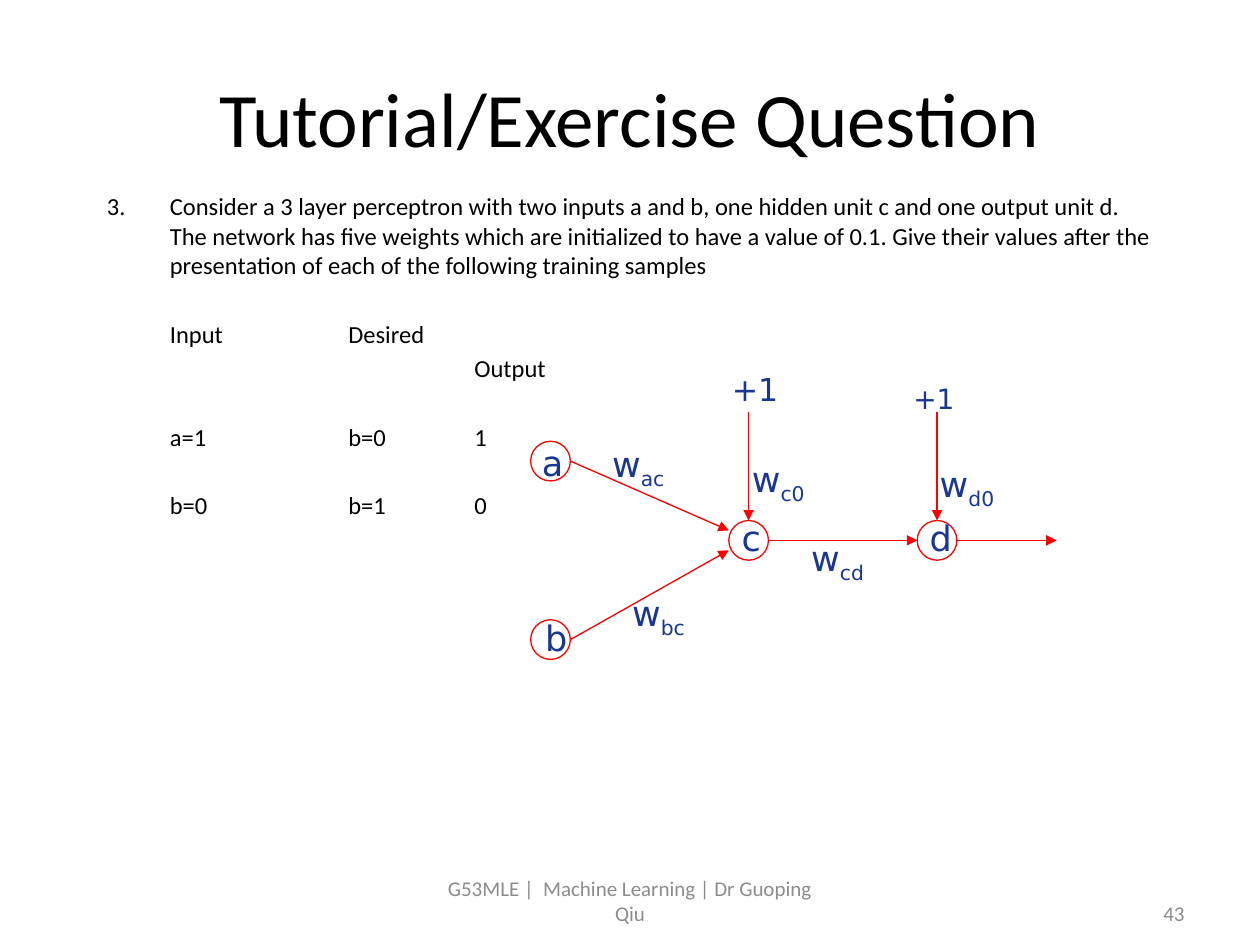
from dataclasses import dataclass

from lxml.etree import SubElement
from pptx import Presentation
from pptx.dml.color import RGBColor
from pptx.enum.shapes import MSO_CONNECTOR, MSO_SHAPE
from pptx.enum.text import MSO_ANCHOR as Anchor, MSO_AUTO_SIZE as AutoSize, PP_ALIGN as Align
from pptx.oxml.ns import qn
from pptx.util import Pt


@dataclass(frozen=True)
class Theme:
    body_font: str = "Calibri"
    label_font: str = "DejaVu Sans"
    ink: RGBColor = RGBColor(0, 0, 0)
    muted: RGBColor = RGBColor(0x8C, 0x8C, 0x8C)
    label: RGBColor = RGBColor(0x19, 0x36, 0x93)
    network: RGBColor = RGBColor(0xFF, 0, 0)
    title_size: float = 44
    body_size: float = 14
    footer_size: float = 12
    label_size: float = 20
    line_width: float = 0.75


theme = Theme()
deck = Presentation()
deck.slide_width, deck.slide_height = Pt(720), Pt(540)
slide = deck.slides.add_slide(deck.slide_layouts[6])


def add_text(text, left, top, width, height, *, size, font=theme.body_font, color=theme.ink,
             align=Align.LEFT, anchor=Anchor.TOP, wrap=True):
    """Each line becomes a paragraph; what follows an underscore is set as a subscript."""
    frame = slide.shapes.add_textbox(Pt(left), Pt(top), Pt(width), Pt(height)).text_frame
    frame.word_wrap = wrap
    frame.auto_size = AutoSize.NONE if wrap else AutoSize.SHAPE_TO_FIT_TEXT
    frame.vertical_anchor = anchor
    for index, line in enumerate(text.split("\n")):
        paragraph = frame.add_paragraph() if index else frame.paragraphs[0]
        paragraph.alignment = align
        main, _, subscript = line.partition("_")
        for part, baseline in ((main, 0), (subscript, -25000)):
            if not part:
                continue
            run = paragraph.add_run()
            run.text = part
            run.font.size, run.font.name = Pt(size), font
            run.font.color.rgb = color
            if baseline:
                run._r.get_or_add_rPr().set("baseline", str(baseline))
    return frame


def add_arrow(x1, y1, x2, y2):
    arrow = slide.shapes.add_connector(MSO_CONNECTOR.STRAIGHT, Pt(x1), Pt(y1), Pt(x2), Pt(y2))
    arrow.line.color.rgb = theme.network
    arrow.line.width = Pt(theme.line_width)
    SubElement(arrow.line._get_or_add_ln(), qn("a:tailEnd"), type="triangle")
    SubElement(arrow._element.spPr, qn("a:effectLst"))


# Title and question
add_text("Tutorial/Exercise Question", 36, 21.6, 648, 90, size=theme.title_size,
         align=Align.CENTER, anchor=Anchor.MIDDLE)

question = (
    "Consider a 3 layer perceptron with two inputs a and b, one hidden unit c and one output "
    "unit d. The network has five weights which are initialized to have a value of 0.1. Give "
    "their values after the presentation of each of the following training samples"
)
samples = ["\tInput\tDesired", "\t\t\tOutput", "\ta=1\tb=0\t1", "\tb=0\tb=1\t0"]
body = add_text("\n".join([question, *samples]), 54, 105.84, 612, 366.5, size=theme.body_size)

question_format = body.paragraphs[0]._p.get_or_add_pPr()
question_format.set("marL", str(Pt(36)))
question_format.set("indent", str(Pt(-36)))
SubElement(question_format, qn("a:buFont"), typeface=theme.body_font)
SubElement(question_format, qn("a:buAutoNum"), type="arabicPeriod", startAt="3")

for sample, gap in zip(body.paragraphs[1:], (22.4, 2.8, 22.4, 22.4)):
    sample.space_before = Pt(gap)
    tab_stops = SubElement(sample._p.get_or_add_pPr(), qn("a:tabLst"))
    for position in (36, 138, 210):
        SubElement(tab_stops, qn("a:tab"), pos=str(Pt(position)), algn="l")

# Footer
footer = dict(size=theme.footer_size, color=theme.muted)
add_text("G53MLE |  Machine Learning | Dr Guoping Qiu", 246, 500.5, 228, 28.75,
         align=Align.CENTER, anchor=Anchor.MIDDLE, **footer)
page_number = add_text("43", 516, 500.5, 168, 28.75, align=Align.RIGHT,
                       anchor=Anchor.BOTTOM, **footer)
page_number.margin_bottom = 0

# Network: units by centre
radius = 11.34
units = {"a": (314.6, 263.5), "b": (314.6, 365.5), "c": (427.8, 308.8), "d": (535.5, 308.8)}
for x, y in units.values():
    unit = slide.shapes.add_shape(MSO_SHAPE.OVAL, Pt(x - radius), Pt(y - radius),
                                  Pt(2 * radius), Pt(2 * radius))
    unit.shadow.inherit = False
    unit.fill.background()
    unit.line.color.rgb = theme.network
    unit.line.width = Pt(theme.line_width)

(ax, ay), (bx, by), (cx, cy), (dx, dy) = units.values()
add_arrow(bx + radius, by, cx - radius, cy + radius / 2)
add_arrow(ax + radius, ay, cx - radius, cy - radius / 2)
add_arrow(cx + radius, cy, dx - radius, dy)
add_arrow(dx + radius, dy, 603.8, dy)
for x in (cx, dx):
    add_arrow(x, 235.3, x, cy - radius)

# Unit, weight and bias labels: text, left, top, width, size
labels = [
    ("a", 302.5, 248.8, 27, theme.label_size),
    ("b", 304.5, 348.5, 28, theme.label_size),
    ("c", 416.7, 291.6, 26, theme.label_size),
    ("d", 524.2, 291.6, 28, theme.label_size),
    ("w_ac", 342.7, 249.4, 46, theme.label_size),
    ("w_bc", 354.2, 334.4, 47, theme.label_size),
    ("w_cd", 456.5, 303.1, 47, theme.label_size),
    ("w_c0", 422.6, 257.8, 47, theme.label_size),
    ("w_d0", 529.9, 260.9, 48, theme.label_size),
    ("+1", 411.1, 208.1, 42, theme.label_size - 2),
    ("+1", 514.8, 214.6, 40, theme.label_size - 4),
]
for text, left, top, width, size in labels:
    add_text(text, left, top, width, 1.16 * size + 7.8, size=size, font=theme.label_font,
             color=theme.label, wrap=False)

deck.save("out.pptx")
